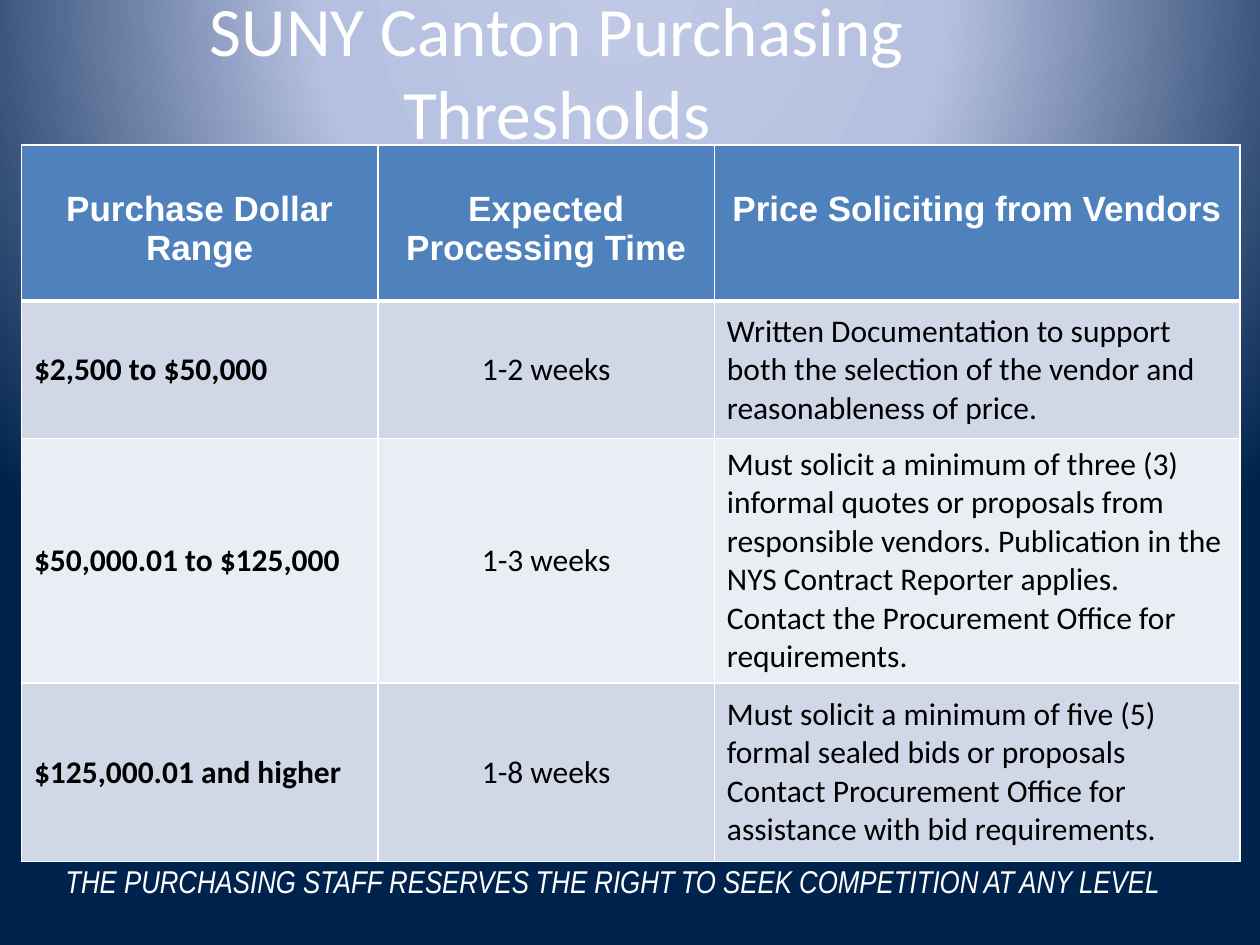
from lxml import etree
from pptx import Presentation
from pptx import util as u
from pptx.dml.color import RGBColor
from pptx.enum import text
from pptx.oxml import parse_xml
from pptx.oxml.ns import nsdecls

WHITE = RGBColor(0xFF, 0xFF, 0xFF)
BLACK = RGBColor(0, 0, 0)
HEADER_BLUE = RGBColor(0x4F, 0x81, 0xBD)
BAND_DARK = RGBColor(0xD0, 0xD8, 0xE8)
BAND_LIGHT = RGBColor(0xE9, 0xED, 0xF4)
GLOW = RGBColor(0xBF, 0xC9, 0xE5)
HALO = RGBColor(0xB5, 0xC0, 0xE0)
NAVY = RGBColor(0x00, 0x23, 0x4D)

LEFT, CENTER = text.PP_ALIGN.LEFT, text.PP_ALIGN.CENTER
COLUMN_WIDTHS = [2.83, 2.67, 4.17]
ROW_HEIGHTS = [1.24, 1.09, 1.94, 1.42]
HEADINGS = ["Purchase Dollar Range", "Expected Processing Time", "Price Soliciting from Vendors"]
THRESHOLDS = [
    ("$2,500 to $50,000", "1-2 weeks",
     "Written Documentation to support both the selection of the vendor and "
     "reasonableness of price."),
    ("$50,000.01 to $125,000", "1-3 weeks",
     "Must solicit a minimum of three (3) informal quotes or proposals from responsible "
     "vendors. Publication in the NYS Contract Reporter applies.\n"
     "Contact the Procurement Office for requirements."),
    ("$125,000.01 and higher", "1-8 weeks",
     "Must solicit a minimum of five (5) formal sealed bids or proposals\n"
     "Contact Procurement Office for assistance with bid requirements."),
]


def write(frame, wording, font, size, color, align=LEFT, bold=False, italic=False):
    """Fill a text frame with evenly styled paragraphs."""
    frame.text = wording
    for para in frame.paragraphs:
        para.alignment = align
        para.font.name = font
        para.font.size = u.Pt(size)
        para.font.color.rgb = color
        para.font.bold = bold
        para.font.italic = italic


def paint_background(page):
    """Give the page a radial gradient centred above its top edge."""
    stops = "".join(
        f'<a:gs pos="{share * 1000}"><a:srgbClr val="{color}"/></a:gs>'
        for share, color in [(0, GLOW), (40, HALO), (100, NAVY)])
    background = parse_xml(
        f'<p:bg {nsdecls("p", "a")}><p:bgPr><a:gradFill rotWithShape="1">'
        f'<a:gsLst>{stops}</a:gsLst><a:path path="circle">'
        '<a:fillToRect l="50000" t="-80000" r="50000" b="180000"/></a:path>'
        '</a:gradFill><a:effectLst/></p:bgPr></p:bg>')
    page.element.cSld.insert(0, background)


def add_label(page, left, top, width, height, wording, **style):
    """Add a wrapping white text box and return its frame."""
    box = page.shapes.add_textbox(*map(u.Inches, (left, top, width, height)))
    frame = box.text_frame
    frame.word_wrap = True
    write(frame, wording, color=WHITE, **style)
    return frame


def add_title(page, left, top, width, height):
    """Add the vertically centred title."""
    frame = add_label(page, left, top, width, height, "SUNY Canton Purchasing Thresholds",
                      font="Calibri", size=39.6, align=CENTER)
    frame.vertical_anchor = text.MSO_ANCHOR.MIDDLE


def style_cell(cell, fill, bottom=1):
    """Fill a cell and draw its white borders."""
    cell.fill.solid()
    cell.fill.fore_color.rgb = fill
    properties = cell._tc.get_or_add_tcPr()
    sides = [("L", 1), ("R", 1), ("T", 1), ("B", bottom)]
    for position, (side, points) in enumerate(sides):
        properties.insert(position, etree.fromstring(
            f'<a:ln{side} {nsdecls("a")} w="{u.Pt(points)}"><a:solidFill>'
            f'<a:srgbClr val="{WHITE}"/></a:solidFill></a:ln{side}>'))


def add_thresholds(page, left, top):
    """Add the table of thresholds with its top left corner at the given place."""
    size = (sum(COLUMN_WIDTHS), sum(ROW_HEIGHTS))
    table = page.shapes.add_table(len(ROW_HEIGHTS), len(COLUMN_WIDTHS),
                                  *map(u.Inches, (left, top, *size))).table
    for column, width in zip(table.columns, COLUMN_WIDTHS):
        column.width = u.Inches(width)
    for row, height in zip(table.rows, ROW_HEIGHTS):
        row.height = u.Inches(height)
    for column, heading in enumerate(HEADINGS):
        cell = table.cell(0, column)
        cell.margin_top = u.Inches(0.36)
        write(cell.text_frame, heading, "Arial", 20, WHITE, CENTER, bold=True)
        style_cell(cell, HEADER_BLUE, bottom=3)
    for row, wordings in enumerate(THRESHOLDS, 1):
        for column, wording in enumerate(wordings):
            cell = table.cell(row, column)
            cell.vertical_anchor = text.MSO_ANCHOR.MIDDLE
            write(cell.text_frame, wording, "Calibri", 18, BLACK,
                  CENTER if column == 1 else LEFT, bold=column == 0)
            style_cell(cell, BAND_DARK if row % 2 else BAND_LIGHT)


def add_notice(page, left, top, width, height):
    """Add the italic notice below the table."""
    add_label(page, left, top, width, height,
              "THE PURCHASING STAFF RESERVES THE RIGHT TO SEEK COMPETITION AT ANY LEVEL",
              font="Arial Narrow", size=18, italic=True)


def main():
    """Build and save the deck."""
    deck = Presentation()
    deck.slide_width, deck.slide_height = u.Inches(10), u.Inches(7.5)
    page = deck.slides.add_slide(deck.slide_layouts[6])
    paint_background(page)
    add_title(page, 0.96, 0.18, 6.92, 0.75)
    add_thresholds(page, 0.17, 1.15)
    add_notice(page, 0.42, 6.79, 9.17, 0.4)
    deck.save("out.pptx")


if __name__ == "__main__":
    main()
